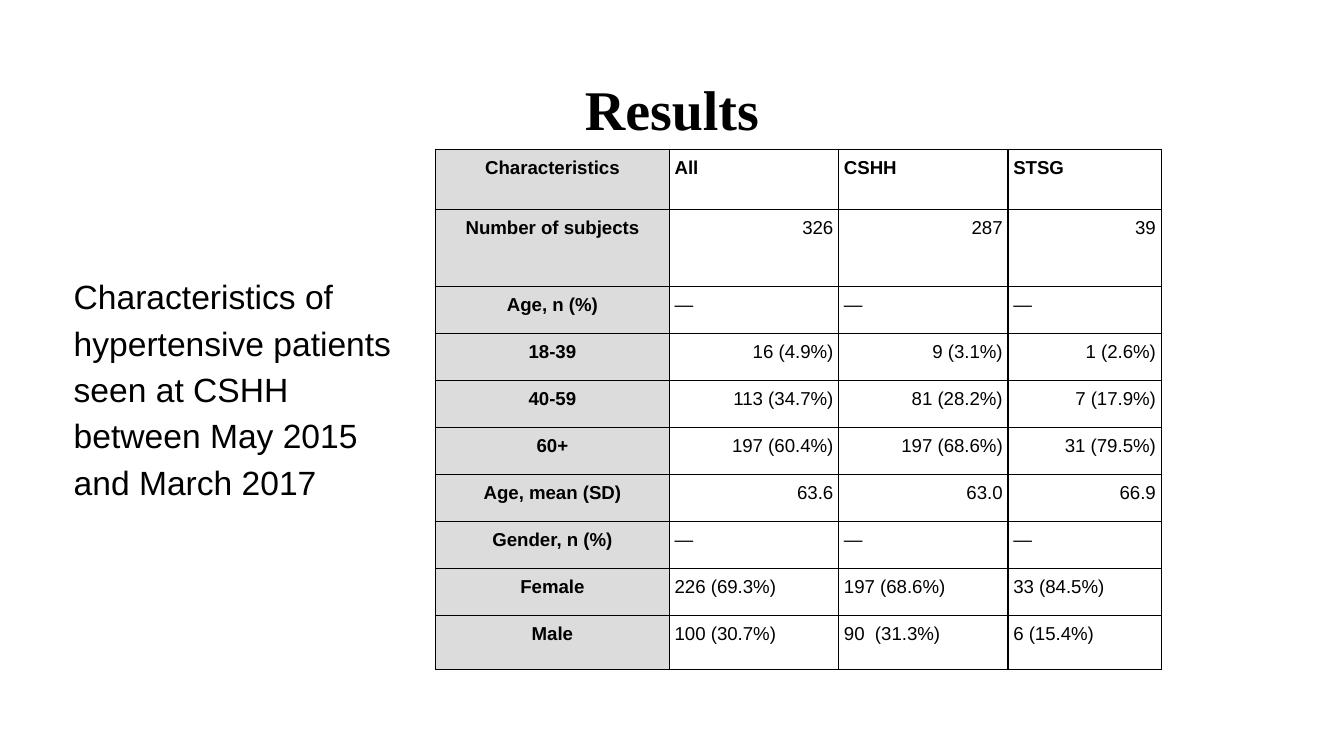
from typing import NamedTuple

from lxml.etree import SubElement
from pptx import Presentation
from pptx.dml.color import RGBColor
from pptx.enum.text import MSO_ANCHOR, MSO_AUTO_SIZE, PP_ALIGN
from pptx.oxml.ns import qn
from pptx.util import Inches, Pt

BLACK = "000000"
LABEL_FILL = "DCDCDC"
LEFT, CENTER, RIGHT = PP_ALIGN.LEFT, PP_ALIGN.CENTER, PP_ALIGN.RIGHT


class Row(NamedTuple):
    label: str
    values: tuple[str, str, str]
    alignment: PP_ALIGN = LEFT
    height: float = 0.35
    bold: bool = False


DASHES = ("—", "—", "—")
ROWS = [
    Row("Characteristics", ("All", "CSHH", "STSG"), height=0.45, bold=True),
    Row("Number of subjects", ("326", "287", "39"), RIGHT, height=0.57),
    Row("Age, n (%)", DASHES),
    Row("18-39", ("16 (4.9%)", "9 (3.1%)", "1 (2.6%)"), RIGHT),
    Row("40-59", ("113 (34.7%)", "81 (28.2%)", "7 (17.9%)"), RIGHT),
    Row("60+", ("197 (60.4%)", "197 (68.6%)", "31 (79.5%)"), RIGHT),
    Row("Age, mean (SD)", ("63.6", "63.0", "66.9"), RIGHT),
    Row("Gender, n (%)", DASHES),
    Row("Female", ("226 (69.3%)", "197 (68.6%)", "33 (84.5%)")),
    Row("Male", ("100 (30.7%)", "90  (31.3%)", "6 (15.4%)"), height=0.4),
]
COLUMN_WIDTHS = [1.74, 1.26, 1.26, 1.14]


def color(value: str) -> RGBColor:
    return RGBColor.from_string(value)


def set_margins(target, margin: float) -> None:
    """Give a text frame or a table cell the same margin on all sides."""
    target.margin_left = target.margin_right = Inches(margin)
    target.margin_top = target.margin_bottom = Inches(margin)


def style_paragraph(paragraph, size: float, alignment: PP_ALIGN, bold: bool = False,
                    name: str = "Arial", spacing: float = 1.15) -> None:
    paragraph.alignment = alignment
    paragraph.line_spacing = spacing
    font = paragraph.font
    font.name, font.size, font.bold = name, Pt(size), bold
    font.color.rgb = color(BLACK)


def add_borders(cell) -> None:
    properties = cell._tc.get_or_add_tcPr()
    for index, side in enumerate(("lnL", "lnR", "lnT", "lnB")):
        line = properties.makeelement(qn(f"a:{side}"), {"w": str(Pt(0.75))})
        fill = SubElement(line, qn("a:solidFill"))
        SubElement(fill, qn("a:srgbClr"), val=BLACK)
        properties.insert(index, line)


def fill_cell(cell, text: str, alignment: PP_ALIGN, bold: bool, fill: str | None) -> None:
    cell.text = text
    set_margins(cell, 0.04)
    style_paragraph(cell.text_frame.paragraphs[0], 10, alignment, bold)
    if fill:
        cell.fill.solid()
        cell.fill.fore_color.rgb = color(fill)
    else:
        cell.fill.background()
    add_borders(cell)


def add_title(slide) -> None:
    title = slide.shapes.title
    title.left, title.top = Inches(0.34), Inches(0.49)
    title.width, title.height = Inches(9.32), Inches(0.63)
    frame = title.text_frame
    frame.text = "Results"
    frame.auto_size = MSO_AUTO_SIZE.NONE
    frame.vertical_anchor = MSO_ANCHOR.MIDDLE
    set_margins(frame, 0.07)
    style_paragraph(frame.paragraphs[0], 30, CENTER, True, "Times New Roman", 1.0)


def add_characteristics_table(slide) -> None:
    height = sum(row.height for row in ROWS)
    table = slide.shapes.add_table(
        len(ROWS), len(COLUMN_WIDTHS), Inches(3.24), Inches(1.11),
        Inches(sum(COLUMN_WIDTHS)), Inches(height)).table
    table.first_row = table.horz_banding = False
    for column, width in zip(table.columns, COLUMN_WIDTHS):
        column.width = Inches(width)
    for index, row in enumerate(ROWS):
        table.rows[index].height = Inches(row.height)
        fill_cell(table.cell(index, 0), row.label, CENTER, True, LABEL_FILL)
        for column, value in enumerate(row.values, start=1):
            fill_cell(table.cell(index, column), value, row.alignment, row.bold, None)


def add_description(slide) -> None:
    box = slide.shapes.add_textbox(Inches(0.45), Inches(1.26), Inches(2.59), Inches(3.4))
    frame = box.text_frame
    frame.word_wrap = True
    set_margins(frame, 0.1)
    frame.margin_top = Inches(0.75)
    frame.text = ("Characteristics of hypertensive patients seen at CSHH "
                  "between May 2015 and March 2017")
    style_paragraph(frame.paragraphs[0], 18, LEFT)


def main() -> None:
    presentation = Presentation()
    presentation.slide_width = Inches(10)
    presentation.slide_height = presentation.slide_width * 9 // 16
    slide = presentation.slides.add_slide(presentation.slide_layouts.get_by_name("Title Only"))
    add_title(slide)
    add_characteristics_table(slide)
    add_description(slide)
    presentation.save("out.pptx")


if __name__ == "__main__":
    main()
